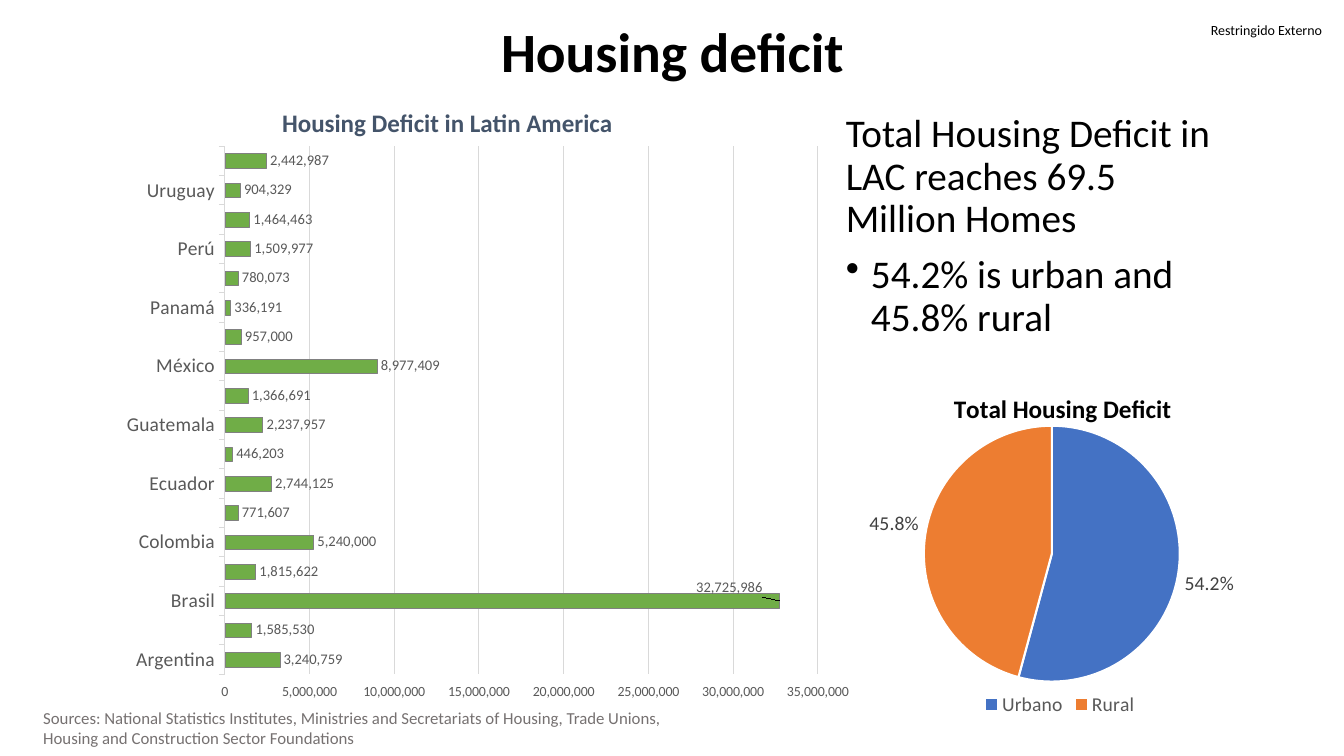
from dataclasses import dataclass

import pptx
import pptx.chart.data
import pptx.dml.color
import pptx.enum.chart
import pptx.enum.text
import pptx.oxml
import pptx.oxml.ns
import pptx.util

Inches = pptx.util.Inches
Pt = pptx.util.Pt
CHART = pptx.enum.chart


@dataclass(frozen=True)
class Theme:
    font: str = "Calibri"
    black: str = "000000"
    heading: str = "44546A"
    axis: str = "595959"
    grid: str = "D9D9D9"
    pie_label: str = "404040"
    source: str = "767171"
    bar: str = "70AD47"
    bar_line: str = "808080"
    urban: str = "4472C4"
    rural: str = "ED7D31"
    white: str = "FFFFFF"
    title_size: float = 39.6
    body_size: float = 28
    chart_title_size: float = 18
    category_size: float = 14
    source_size: float = 12
    label_size: float = 10.5
    small_size: float = 10


DEFICITS = {
    "Argentina": 3240759, "Bolivia": 1585530, "Brasil": 32725986,
    "Chile": 1815622, "Colombia": 5240000, "Costa Rica": 771607,
    "Ecuador": 2744125, "El Salvador": 446203, "Guatemala": 2237957,
    "Honduras": 1366691, "México": 8977409, "Nicaragua": 957000,
    "Panamá": 336191, "Paraguay": 780073, "Perú": 1509977,
    "República Dominicana": 1464463, "Uruguay": 904329, "Venezuela": 2442987,
}
SHARES = {"Urbano": 0.542, "Rural": 0.458}


def rgb(color):
    return pptx.dml.color.RGBColor.from_string(color)


def chart_element(tag, **attributes):
    element = pptx.oxml.parse_xml(f"<c:{tag} {pptx.oxml.ns.nsdecls('c')}/>")
    for name, value in attributes.items():
        element.set(name, str(value))
    return element


def set_layout(parent, index, inner=False, **values):
    """Give a chart part a manual layout, as fractions of the chart."""
    for old in parent.findall(pptx.oxml.ns.qn("c:layout")):
        parent.remove(old)
    layout = chart_element("layout")
    manual = chart_element("manualLayout")
    layout.append(manual)
    if inner:
        manual.append(chart_element("layoutTarget", val="inner"))
        for mode in ("xMode", "yMode"):
            manual.append(chart_element(mode, val="edge"))
    for name, value in values.items():
        manual.append(chart_element(name, val=value))
    parent.insert(index, layout)


class SlideBuilder:
    def __init__(self, slide, theme):
        self.slide = slide
        self.theme = theme

    def style(self, font, size, color, bold=False):
        font.name = self.theme.font
        font.size = Pt(size)
        font.bold = bold
        font.color.rgb = rgb(color)

    def text(self, box, paragraphs, size, color, bold=False):
        shape = self.slide.shapes.add_textbox(*map(Inches, box))
        frame = shape.text_frame
        frame.word_wrap = True
        frame.text = "\n".join(paragraphs)
        for paragraph in frame.paragraphs:
            for run in paragraph.runs:
                self.style(run.font, size, color, bold)
        return frame

    def bullet(self, paragraph, indent):
        properties = paragraph._p.get_or_add_pPr()
        properties.set("marL", str(Inches(indent)))
        properties.set("indent", str(-Inches(indent)))
        properties.append(pptx.oxml.parse_xml(
            f'<a:buChar {pptx.oxml.ns.nsdecls("a")} char="•"/>'))

    def chart(self, kind, box, plot_box, title, title_color, values, number_format):
        data = pptx.chart.data.CategoryChartData()
        data.categories = list(values)
        data.add_series("Series 1", list(values.values()))
        frame = self.slide.shapes.add_chart(kind, *map(Inches, box), data)
        chart = frame.chart
        self.style(chart.font, self.theme.small_size, self.theme.black)
        chart.has_title = True
        chart.chart_title.text_frame.text = title
        run = chart.chart_title.text_frame.paragraphs[0].runs[0]
        self.style(run.font, self.theme.chart_title_size, title_color, True)
        set_layout(chart._chartSpace.chart.plotArea, 0, inner=True,
                   **dict(zip("xywh", plot_box)))
        plot = chart.plots[0]
        plot.has_data_labels = True
        labels = plot.data_labels
        labels.show_value = True
        labels.show_percentage = False
        labels.number_format = number_format
        labels.number_format_is_linked = False
        labels.position = CHART.XL_LABEL_POSITION.OUTSIDE_END
        return chart

    def bar_chart(self, box, plot_box, title, values, raised_label):
        theme = self.theme
        chart = self.chart(CHART.XL_CHART_TYPE.BAR_CLUSTERED, box, plot_box, title,
                           theme.heading, values, "#,##0")
        chart.has_legend = False
        plot = chart.plots[0]
        plot.gap_width = 100
        plot.vary_by_categories = False
        self.style(plot.data_labels.font, theme.label_size, theme.axis)
        series = plot.series[0]
        series.format.fill.solid()
        series.format.fill.fore_color.rgb = rgb(theme.bar)
        series.format.line.color.rgb = rgb(theme.bar_line)
        series.format.line.width = Pt(0.25)

        category_axis, value_axis = chart.category_axis, chart.value_axis
        self.style(category_axis.tick_labels.font, theme.category_size, theme.axis)
        self.style(value_axis.tick_labels.font, theme.small_size, theme.axis)
        for axis in (category_axis, value_axis):
            axis.major_tick_mark = CHART.XL_TICK_MARK.OUTSIDE
        category_axis._element.find(pptx.oxml.ns.qn("c:noMultiLvlLbl")).addprevious(
            chart_element("tickLblSkip", val=2))
        value_axis.minimum_scale = 0
        value_axis.maximum_scale = 35_000_000
        value_axis.major_unit = 5_000_000
        value_axis.tick_labels.number_format = "#,##0"
        value_axis.tick_labels.number_format_is_linked = False
        value_axis.format.line.fill.background()
        for line in (category_axis.format.line, value_axis.major_gridlines.format.line):
            line.color.rgb = rgb(theme.grid)
            line.width = Pt(0.75)

        label = series.points[list(values).index(raised_label)].data_label
        self.style(label.font, theme.label_size, theme.axis)
        label.position = CHART.XL_LABEL_POSITION.OUTSIDE_END
        element = label._get_or_add_dLbl()
        set_layout(element, 1, x=-0.11, y=-0.02)
        element.insert(2, chart_element("numFmt", formatCode="#,##0", sourceLinked=0))
        # Series labels take precedence over plot labels, so they carry the same style.
        labels = series.data_labels
        labels.show_value = True
        labels.number_format = "#,##0"
        labels.number_format_is_linked = False
        labels.position = CHART.XL_LABEL_POSITION.OUTSIDE_END
        self.style(labels.font, theme.label_size, theme.axis)

    def pie_chart(self, box, plot_box, title, values, colors):
        theme = self.theme
        chart = self.chart(CHART.XL_CHART_TYPE.PIE, box, plot_box, title,
                           theme.black, values, "0.0%")
        set_layout(chart.chart_title._element, 1, xMode="edge", yMode="edge",
                   x=0.22, y=0.05)
        chart.has_legend = True
        chart.legend.position = CHART.XL_LEGEND_POSITION.BOTTOM
        chart.legend.include_in_layout = False
        self.style(chart.legend.font, theme.category_size, theme.axis)
        plot = chart.plots[0]
        self.style(plot.data_labels.font, theme.category_size, theme.pie_label)
        for index, color in enumerate(colors):
            slice_format = plot.series[0].points[index].format
            slice_format.fill.solid()
            slice_format.fill.fore_color.rgb = rgb(color)
            slice_format.line.color.rgb = rgb(theme.white)
            slice_format.line.width = Pt(1.5)


def main():
    theme = Theme()
    presentation = pptx.Presentation()
    presentation.slide_width = Inches(13.33)
    presentation.slide_height = Inches(7.5)
    slide = presentation.slides.add_slide(presentation.slide_layouts[6])
    builder = SlideBuilder(slide, theme)

    marking = builder.text((12.01, 0.21, 1.14, 0.17), ["Restringido Externo"],
                           theme.small_size, theme.black)
    marking.word_wrap = False
    marking.margin_left = marking.margin_right = 0
    marking.margin_top = marking.margin_bottom = 0

    body = builder.text((8.29, 1.08, 3.99, 3.26),
                        ["Total Housing Deficit in LAC reaches 69.5 Million Homes",
                         "54.2% is urban and 45.8% rural"],
                        theme.body_size, theme.black)
    for paragraph in body.paragraphs:
        paragraph.line_spacing = 0.9
        paragraph.space_before = Pt(10)
    builder.bullet(body.paragraphs[1], 0.25)

    builder.bar_chart((0.51, 0.82, 7.92, 6.31), (0.219, 0.1, 0.749, 0.83),
                      "Housing Deficit in Latin America", DEFICITS, "Brasil")
    builder.pie_chart((8.55, 3.66, 3.93, 3.49), (0.156, 0.152, 0.646, 0.747),
                      "Total Housing Deficit", SHARES, (theme.urban, theme.rural))

    title = builder.text((0.92, 0.27, 11.5, 0.55), ["Housing deficit"],
                         theme.title_size, theme.black, True)
    title.vertical_anchor = pptx.enum.text.MSO_ANCHOR.MIDDLE
    title.paragraphs[0].alignment = pptx.enum.text.PP_ALIGN.CENTER
    title.paragraphs[0].line_spacing = 0.9

    builder.text((0.33, 6.97, 6.67, 0.5),
                 ["Sources: National Statistics Institutes, Ministries and Secretariats of "
                  "Housing, Trade Unions, Housing and Construction Sector Foundations"],
                 theme.source_size, theme.source)
    presentation.save("out.pptx")


if __name__ == "__main__":
    main()
